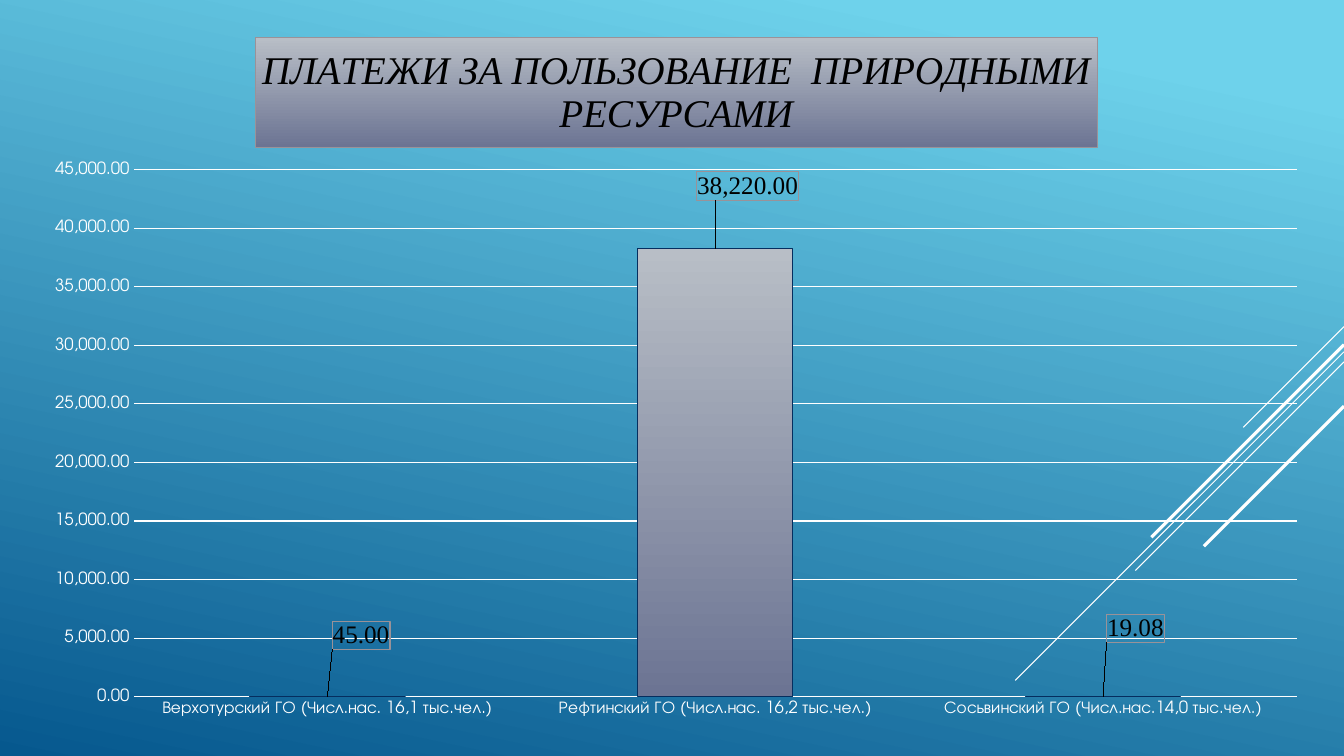
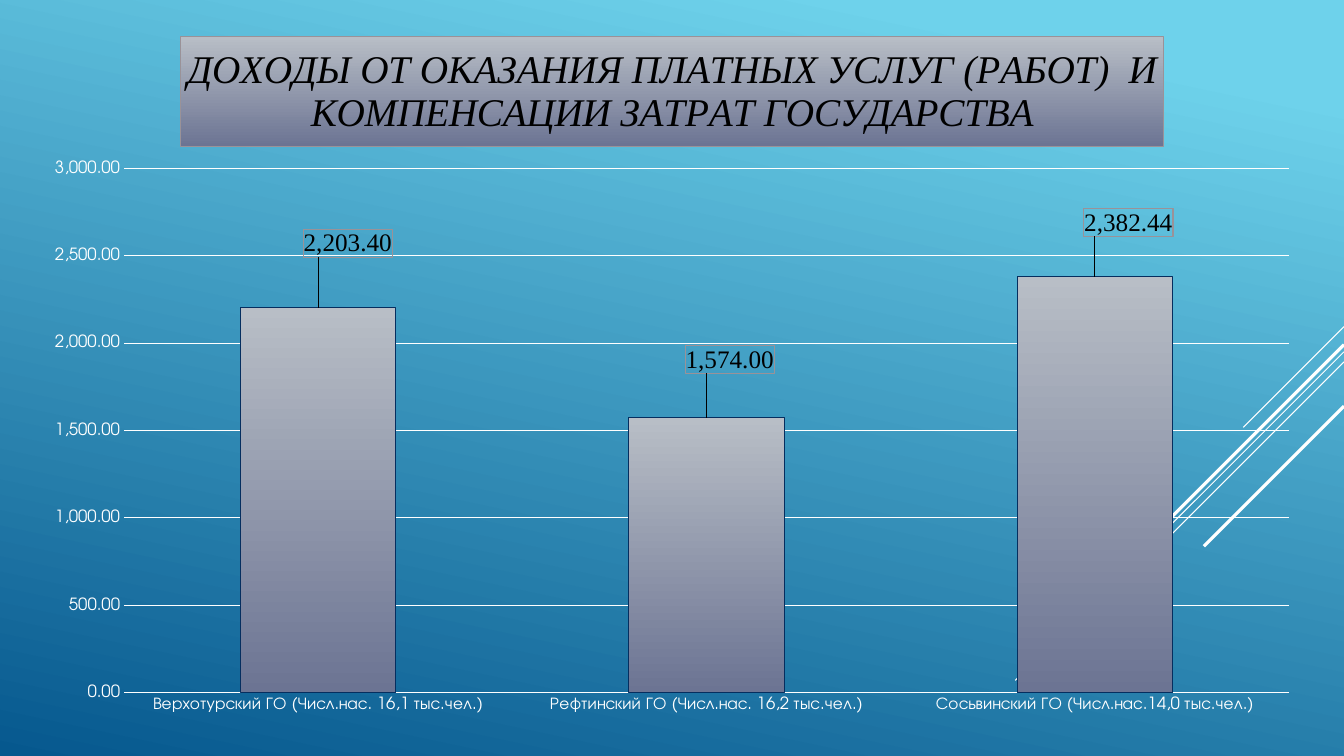
from lxml import etree
from pptx import Presentation
from pptx.chart.data import CategoryChartData
from pptx.dml.color import RGBColor
from pptx.enum.chart import XL_CHART_TYPE, XL_LABEL_POSITION, XL_TICK_MARK
from pptx.enum.shapes import MSO_CONNECTOR
from pptx.enum.text import PP_ALIGN
from pptx.oxml import parse_xml
from pptx.oxml.ns import nsdecls, qn
from pptx.util import Inches, Pt

COLUMNS = XL_CHART_TYPE.COLUMN_CLUSTERED
OUTSIDE_END = XL_LABEL_POSITION.OUTSIDE_END
NO_TICK = XL_TICK_MARK.NONE
STRAIGHT = MSO_CONNECTOR.STRAIGHT
CENTER = PP_ALIGN.CENTER

WIDTH, HEIGHT = 13.33, 7.5
NUMBER_FORMAT = "#,##0.00"
TOWNS = [
    "Верхотурский ГО (Числ.нас. 16,1 тыс.чел.)",
    "Рефтинский ГО (Числ.нас. 16,2 тыс.чел.)",
    "Сосьвинский ГО (Числ.нас.14,0 тыс.чел.)",
]
# Diagonal rays: height at the right edge, horizontal run, weight
RAYS = [(3.24, 1, 0.75), (3.49, 3.26, 0.75), (3.59, 2.07, 0.75),
        (3.42, 1.91, 2.25), (4.03, 1.39, 2.25)]
# Title, chart box, values, label shifts in percent of the chart's size
CHARTS = [
    ("ПЛАТЕЖИ ЗА ПОЛЬЗОВАНИЕ  ПРИРОДНЫМИ РЕСУРСАМИ",
     (0.29, 0.18, 12.83, 7.07), (45, 38220, 19.08),
     [(2.6, -6), (2.5, -6.3), (2.5, -7)]),
    ("ДОХОДЫ ОТ ОКАЗАНИЯ ПЛАТНЫХ УСЛУГ (РАБОТ)  И КОМПЕНСАЦИИ ЗАТРАТ ГОСУДАРСТВА",
     (0.29, 0.17, 12.75, 7.04), (2203.4, 1574, 2382.44),
     [(2.3, -6.5), (1.8, -5.6), (2.6, -5)]),
]


def rgb(color):
    return RGBColor.from_string(color)


def set_font(font, name, size, color, **flags):
    font.name, font.size = name, Pt(size)
    font.color.rgb = rgb(color)
    for flag, value in flags.items():
        setattr(font, flag, value)


def set_line(line, color, weight=0.75):
    line.color.rgb = rgb(color)
    line.width = Pt(weight)


def set_gradient(fill, colors, angle, start=0):
    """Fill with two colours; angle is clockwise degrees, start a share."""
    fill.gradient()
    fill.gradient_angle = 360 - angle
    for stop, color, position in zip(fill.gradient_stops, colors, (start, 1)):
        stop.color.rgb = rgb(color)
        stop.position = position


class Deck:
    SKY = ("6ED2EB", "06588E")
    STEEL = ("B8BEC6", "6C7493")
    WHITE, BLACK, NAVY, FRAME = "FFFFFF", "000000", "052E5F", "9A9298"
    SANS, SERIF = "TeX Gyre Adventor", "Times New Roman"

    def __init__(self):
        self.prs = Presentation()
        self.prs.slide_width = Inches(WIDTH)
        self.prs.slide_height = Inches(HEIGHT)
        self.master = self.prs.slide_master
        set_gradient(self.master.background.fill, self.SKY, 102, start=0.1)
        self.s = None

    def new_slide(self):
        first = self.s is None
        self.s = self.prs.slides.add_slide(self.prs.slide_layouts[6])
        if first:
            for ray in RAYS:
                self.master_ray(*ray)

    def master_ray(self, top, run, weight):
        """Draw a 45-degree ray from the right edge and move it to the master."""
        points = (WIDTH, top, WIDTH - run, top + run)
        ray = self.s.shapes.add_connector(STRAIGHT, *map(Inches, points))
        set_line(ray.line, self.WHITE, weight)
        etree.SubElement(ray.element.spPr, qn("a:effectLst"))
        self.master.shapes.element.append(ray.element)

    def column_chart(self, title, box, values, shifts):
        data = CategoryChartData(number_format=NUMBER_FORMAT)
        data.categories = TOWNS
        data.add_series(title, values)
        chart = self.s.shapes.add_chart(COLUMNS, *map(Inches, box), data).chart
        set_font(chart.font, self.SANS, 10, self.WHITE)
        chart.has_legend = False
        self.chart_title(chart, title)
        for axis in (chart.category_axis, chart.value_axis):
            self.axis(axis)
        grid = chart.value_axis.major_gridlines
        set_line(grid.format.line, self.WHITE)
        chart.value_axis.tick_labels.number_format = NUMBER_FORMAT
        chart.value_axis.tick_labels.number_format_is_linked = False

        plot = chart.plots[0]
        plot.gap_width = 150
        plot.vary_by_categories = False
        series = plot.series[0]
        set_gradient(series.format.fill, self.STEEL, 90)
        set_line(series.format.line, self.NAVY)
        labels = series.data_labels
        labels.show_value = True
        labels.number_format = NUMBER_FORMAT
        labels.number_format_is_linked = False
        set_font(labels.font, self.SERIF, 18, self.BLACK)
        for i, shift in enumerate(shifts):
            self.value_label(series.points[i].data_label, i, labels, shift)

    def chart_title(self, chart, text):
        chart.has_title = True
        title = chart.chart_title
        set_gradient(title.format.fill, self.STEEL, 90)
        set_line(title.format.line, self.FRAME)
        p = title.text_frame.paragraphs[0]
        p.alignment = CENTER
        r = p.add_run()
        r.text = text
        set_font(r.font, self.SERIF, 28, self.BLACK, bold=False, italic=True)

    def axis(self, axis):
        axis.major_tick_mark = axis.minor_tick_mark = NO_TICK
        axis.format.line.fill.background()
        set_font(axis.tick_labels.font, self.SANS, 12, self.WHITE)

    def value_label(self, label, index, labels, shift):
        """Frame one point's label and shift it from its usual place."""
        set_font(label.font, self.SERIF, 18, self.BLACK)
        label.position = OUTSIDE_END
        x, y = (part / 100 for part in shift)
        layout = parse_xml(
            f'<c:layout {nsdecls("c")}><c:manualLayout>'
            f'<c:x val="{x:.3f}"/><c:y val="{y:.3f}"/>'
            '</c:manualLayout></c:layout>')
        frame = parse_xml(
            f'<c:spPr {nsdecls("c", "a")}><a:noFill/><a:ln w="9525"><a:solidFill>'
            f'<a:srgbClr val="{self.FRAME}"/></a:solidFill></a:ln></c:spPr>')
        dLbl = next(d for d in labels.font and labels._element.findall(qn("c:dLbl"))
                    if d.find(qn("c:idx")).get("val") == str(index))
        for old in dLbl.findall(qn("c:spPr")):
            dLbl.remove(old)
        dLbl.find(qn("c:idx")).addnext(layout)
        dLbl.find(qn("c:txPr")).addprevious(frame)


def main():
    deck = Deck()
    for content in CHARTS:
        deck.new_slide()
        deck.column_chart(*content)
    deck.prs.save("out.pptx")


if __name__ == "__main__":
    main()
